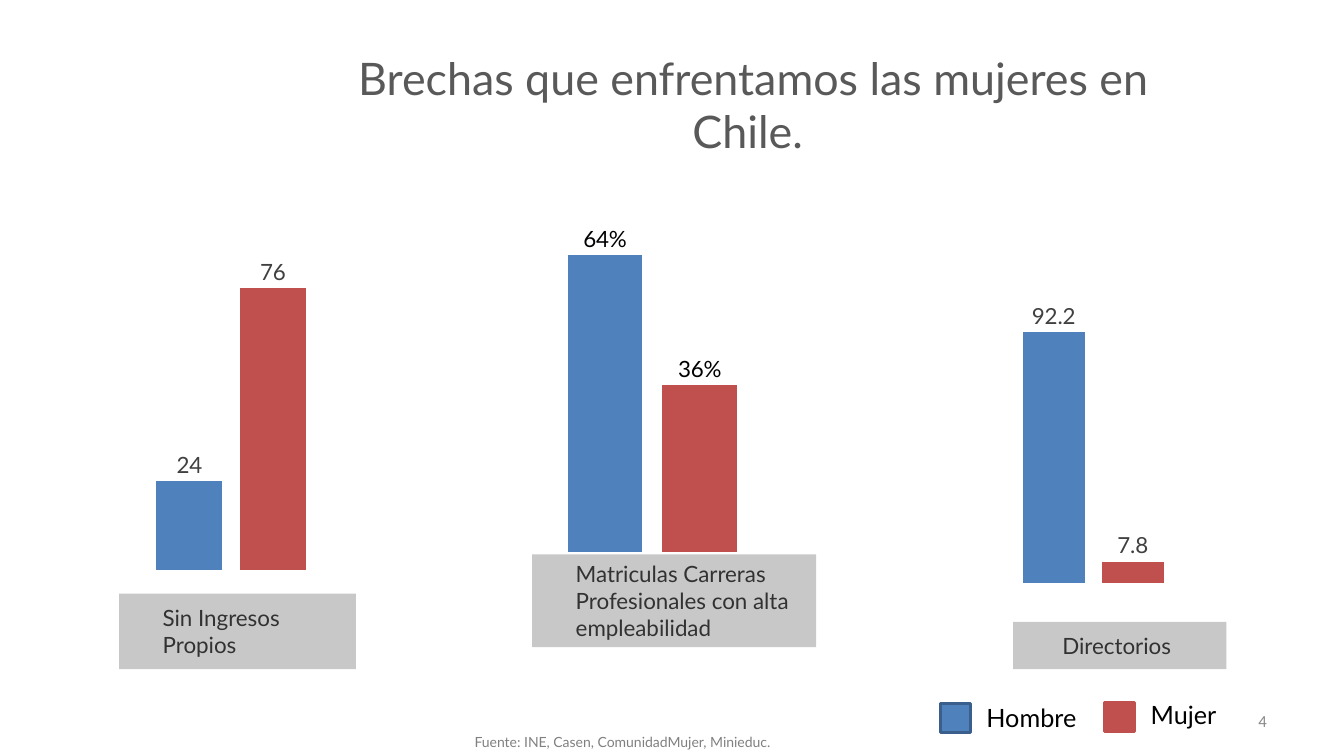
from pptx import Presentation
from pptx.chart.data import CategoryChartData
from pptx.dml.color import RGBColor
from pptx.enum.chart import XL_CHART_TYPE, XL_LABEL_POSITION
from pptx.enum.shapes import MSO_SHAPE
from pptx.enum.text import MSO_ANCHOR, MSO_AUTO_SIZE, PP_ALIGN
from pptx.oxml import parse_xml
from pptx.util import Cm, Pt

BLUE, RED, GREY = "4F81BD", "C0504D", "C8C8C8"
TITLE = ("Brechas que enfrentamos las mujeres en Chile. ", (8.36, 1.14, 21.26, 3.0))
GAPS = [
    dict(name="Sin Ingresos Propios", tag=(3.0, 14.96, 5.97, 1.9),
         box=(1.02, 6.35, 8.51, 9.12), plot=(0.13, 0.06, 0.87, 0.82),
         vals=(24, 76), top=80, form="General", ink="404040"),
    dict(name="Matriculas Carreras Profesionales con alta empleabilidad",
         tag=(13.41, 13.97, 7.16, 2.34),
         box=(12.07, 5.56, 8.74, 8.53), plot=(0.02, 0.02, 0.96, 0.96),
         vals=(0.64, 0.36), top=0.7, form="0%", ink="000000"),
    dict(name=" Directorios", tag=(25.53, 15.67, 5.38, 1.19),
         box=(23.9, 7.62, 7.77, 7.85), plot=(0.02, 0, 0.9, 0.9),
         vals=(92.2, 7.8), top=102, form="General", ink="404040"),
]
KEYS = [
    ("Hombre", BLUE, "3A5F8C", (23.7, 17.73), (24.61, 17.58)),
    ("Mujer", RED, RED, (27.84, 17.7), (28.75, 17.5)),
]
NOTES = [
    ("Fuente: INE, Casen, ComunidadMujer, Minieduc.", (11.71, 18.36, 12.19, 0.69),
     dict(size=10, ink="808080")),
    ("4", (24.28, 17.65, 7.9, 1.02),
     dict(size=12, ink="898989", face="Calibri", align=PP_ALIGN.RIGHT,
          anchor=MSO_ANCHOR.MIDDLE)),
]


def tint(code):
    return RGBColor.from_string(code)


def style(font, size, ink, face="Lato"):
    font.size, font.name = Pt(size), face
    font.color.rgb = tint(ink)


def write(shape, text, size=16, ink="000000", face="Lato", align=PP_ALIGN.LEFT,
          anchor=MSO_ANCHOR.TOP, pad=(0.25, 0.13, 0.25, 0.13)):
    frame = shape.text_frame
    frame.text = text
    frame.word_wrap = True
    frame.auto_size = MSO_AUTO_SIZE.NONE
    frame.vertical_anchor = anchor
    frame.margin_left, frame.margin_top, frame.margin_right, frame.margin_bottom = map(Cm, pad)
    para = frame.paragraphs[0]
    para.alignment = align
    style(para.font, size, ink, face)


def block(slide, box, fill, edge=None):
    shape = slide.shapes.add_shape(MSO_SHAPE.RECTANGLE, *map(Cm, box))
    shape.shadow.inherit = False
    shape.fill.solid()
    shape.fill.fore_color.rgb = tint(fill)
    if edge:
        shape.line.color.rgb = tint(edge)
        shape.line.width = Pt(2)
    else:
        shape.line.fill.background()
    return shape


def place(chart, plot):
    area = chart.element.xpath("c:chart/c:plotArea")[0]
    for old in area.xpath("c:layout"):
        area.remove(old)
    modes = "".join(f'<c:{k}Mode val="edge"/>' for k in "xy")
    sizes = "".join(f'<c:{k} val="{v}"/>' for k, v in zip("xywh", plot))
    area.insert(0, parse_xml(
        '<c:layout xmlns:c="http://schemas.openxmlformats.org/drawingml/2006/chart">'
        f'<c:manualLayout><c:layoutTarget val="inner"/>{modes}{sizes}'
        '</c:manualLayout></c:layout>'))


def draw(slide, gap):
    data = CategoryChartData(number_format=gap["form"])
    data.categories = ["1"]
    for key, val in zip(KEYS, gap["vals"]):
        data.add_series(key[0], [val])
    chart = slide.shapes.add_chart(
        XL_CHART_TYPE.COLUMN_CLUSTERED, *map(Cm, gap["box"]), data).chart
    chart.has_legend = chart.has_title = False
    style(chart.font, 16, "000000")
    axis = chart.value_axis
    axis.minimum_scale, axis.maximum_scale = 0, gap["top"]
    axis.has_major_gridlines = False
    axis.visible = chart.category_axis.visible = False
    bars = chart.plots[0]
    bars.gap_width, bars.overlap = 219, -27
    bars.vary_by_categories = False
    for part, key in zip(bars.series, KEYS):
        part.format.fill.solid()
        part.format.fill.fore_color.rgb = tint(key[1])
        marks = part.data_labels
        marks.show_value = True
        marks.position = XL_LABEL_POSITION.OUTSIDE_END
        marks.number_format = gap["form"]
        marks.number_format_is_linked = False
        style(marks.font, 16, gap["ink"])
    place(chart, gap["plot"])


def main():
    deck = Presentation()
    deck.slide_width, deck.slide_height = Cm(33.87), Cm(19.05)
    slide = deck.slides.add_slide(deck.slide_layouts[5])

    text, box = TITLE
    head = slide.shapes.title
    head.left, head.top, head.width, head.height = map(Cm, box)
    write(head, text, size=32, ink="595959", align=PP_ALIGN.CENTER)

    for gap in GAPS:
        tag = block(slide, gap["tag"], GREY)
        write(tag, gap["name"], ink="323232", anchor=MSO_ANCHOR.MIDDLE,
              pad=(1.1, 0.2, 0.3, 0.2))
        draw(slide, gap)

    for name, fill, edge, spot, left in KEYS:
        block(slide, (*spot, 0.76, 0.74), fill, edge)
        label = slide.shapes.add_textbox(*map(Cm, (*left, 4.8, 1.02)))
        write(label, name, size=18)

    for text, box, look in NOTES:
        write(slide.shapes.add_textbox(*map(Cm, box)), text, **look)

    deck.save("out.pptx")


if __name__ == "__main__":
    main()
